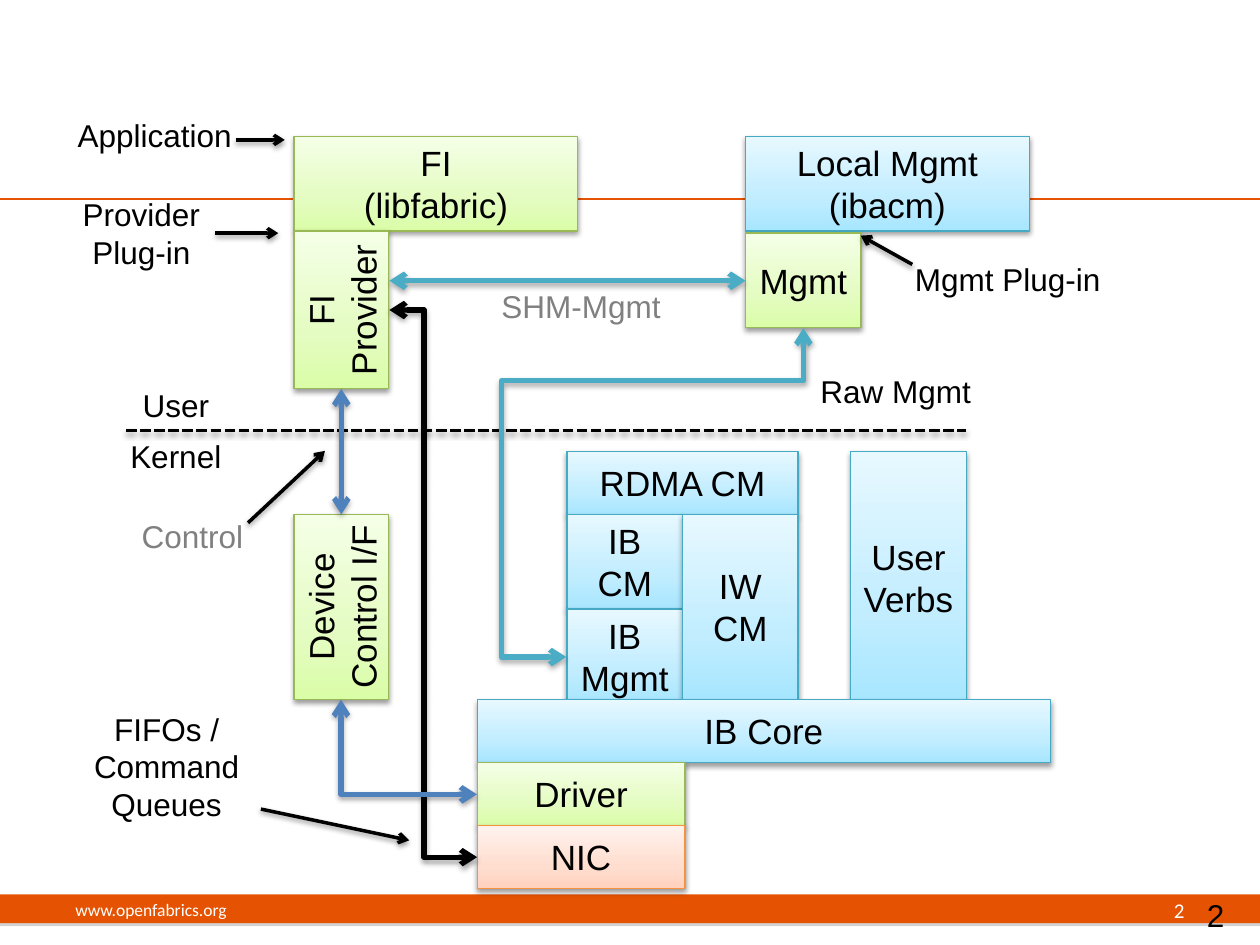
from copy import deepcopy
from dataclasses import dataclass

from lxml.etree import SubElement
from pptx import Presentation
from pptx.dml.color import RGBColor
from pptx.enum.dml import MSO_LINE
from pptx.enum.shapes import MSO_CONNECTOR, MSO_SHAPE
from pptx.enum.text import MSO_ANCHOR, MSO_AUTO_SIZE, PP_ALIGN
from pptx.oxml.ns import qn
from pptx.util import Cm, Pt


@dataclass(frozen=True)
class Theme:
    # Gradient from bottom to top, then the outline
    green: tuple = ("DAFDA7", "E4FCC2", "F5FFE7", "98B955")
    blue: tuple = ("A7E6FF", "C1EDFF", "E7F8FF", "46AAC5")
    orange: tuple = ("FFD2BD", "FFDED0", "FFF2ED", "F69240")
    stops: tuple = (0, 0.35, 1)
    brand: str = "E55302"
    black: str = "000000"
    white: str = "FFFFFF"
    grey: str = "808080"
    teal: str = "4BACC6"
    steel: str = "4F81BD"
    font: str = "Arial"
    footer_font: str = "Calibri"
    box_size: int = 20
    label_size: int = 18
    number_size: int = 12
    footer_size: int = 10


T = Theme()


def rgb(value):
    return RGBColor.from_string(value)


def write(tf, text, size=T.label_size, color=T.black, font=T.font,
          align=PP_ALIGN.CENTER, anchor=MSO_ANCHOR.TOP):
    tf.word_wrap = True
    tf.vertical_anchor = anchor
    tf.text = text
    for p in tf.paragraphs:
        p.alignment = align
        for r in p.runs:
            r.font.size, r.font.name = Pt(size), font
            r.font.color.rgb = rgb(color)


def add_shadow(sp, color=T.black, alpha=38, blur=3.1, dist=1.6):
    effects = SubElement(sp._element.spPr, qn("a:effectLst"))
    if not alpha:
        return
    shadow = SubElement(effects, qn("a:outerShdw"), blurRad=str(Pt(blur)),
                        dist=str(Pt(dist)), dir="5400000", rotWithShape="0")
    clr = SubElement(shadow, qn("a:srgbClr"), val=color)
    SubElement(clr, qn("a:alpha"), val=str(alpha * 1000))


class Diagram:
    def __init__(self, slide, theme):
        self.s, self.t = slide, theme

    def band(self, x, y, w, h):
        sp = self.s.shapes.add_shape(MSO_SHAPE.RECTANGLE, Cm(x), Cm(y), Cm(w), Cm(h))
        sp.fill.solid()
        sp.fill.fore_color.rgb = rgb(self.t.brand)
        sp.line.fill.background()
        add_shadow(sp, self.t.grey, 35, 0, 1.8)

    def box(self, text, x, y, w, h, style, vertical=False):
        sp = self.s.shapes.add_shape(MSO_SHAPE.RECTANGLE, Cm(x), Cm(y), Cm(w), Cm(h))
        sp.fill.gradient()
        sp.fill.gradient_angle = 90
        stops = sp._element.spPr.find(".//" + qn("a:gsLst"))
        stops.append(deepcopy(stops[0]))
        for stop, pos, color in zip(sp.fill.gradient_stops, self.t.stops, style):
            stop.position, stop.color.rgb = pos, rgb(color)
        sp.line.color.rgb, sp.line.width = rgb(style[-1]), Pt(0.75)
        add_shadow(sp)
        tf = sp.text_frame
        write(tf, text, size=self.t.box_size, anchor=MSO_ANCHOR.MIDDLE)
        if vertical:
            tf._txBody.bodyPr.set("vert", "vert270")
            # Narrow margins keep the turned text on two lines
            tf.margin_left = tf.margin_right = Cm(0.05)
            tf.margin_top = tf.margin_bottom = Cm(0.05)

    def label(self, text, x, y, w, h=1.02, grow=True, **fmt):
        sp = self.s.shapes.add_textbox(Cm(x), Cm(y), Cm(w), Cm(h))
        write(sp.text_frame, text, **fmt)
        if grow:
            sp.text_frame.auto_size = MSO_AUTO_SIZE.SHAPE_TO_FIT_TEXT

    def line(self, x1, y1, x2, y2, color=T.black, width=2, ends=(), dash=None,
             shadow=38, kind=MSO_CONNECTOR.STRAIGHT):
        cx = self.s.shapes.add_connector(kind, Cm(x1), Cm(y1), Cm(x2), Cm(y2))
        cx.line.color.rgb, cx.line.width = rgb(color), Pt(width)
        if dash:
            cx.line.dash_style = dash
        for end in ends:
            SubElement(cx.line._get_or_add_ln(), qn(f"a:{end}"), type="arrow")
        add_shadow(cx, alpha=shadow)
        return cx

    def arrow(self, *ends):
        self.line(*ends, ends=("tailEnd",))

    def link(self, x1, y1, x2, y2, color, **fmt):
        return self.line(x1, y1, x2, y2, color, 3, ("headEnd", "tailEnd"),
                         shadow=35, **fmt)

    def elbow(self, x1, y1, x2, y2, color, preset, rotation=0, adjust=()):
        """Ends are those of the connector before it is rotated."""
        cx = self.link(x1, y1, x2, y2, color, kind=MSO_CONNECTOR.ELBOW)
        sp_pr = cx._element.spPr
        sp_pr.find(qn("a:xfrm")).set("rot", str(rotation * 60000))
        geom = sp_pr.find(qn("a:prstGeom"))
        geom.set("prst", preset)
        guides = geom.find(qn("a:avLst"))
        for i, value in enumerate(adjust, 1):
            SubElement(guides, qn("a:gd"), name=f"adj{i}", fmla=f"val {value}")


def main():
    prs = Presentation()
    prs.slide_width, prs.slide_height = Cm(25.4), Cm(19.05)
    d = Diagram(prs.slides.add_slide(prs.slide_layouts[6]), T)

    # Header rule and footer
    d.band(0, 18.03, 25.4, 0.58)
    d.line(0, 4.02, 25.4, 4.02, T.brand, 1, shadow=0)
    footer = dict(grow=False, color=T.white, font=T.footer_font, anchor=MSO_ANCHOR.MIDDLE)
    d.label("www.openfabrics.org", 1.27, 17.83, 8.05, size=T.footer_size,
            align=PP_ALIGN.LEFT, **footer)
    d.label("2", 18.21, 17.83, 5.92, size=T.number_size, align=PP_ALIGN.RIGHT, **footer)
    d.label("2", 24.08, 17.93, 1.27, grow=False, align=PP_ALIGN.LEFT)

    # Columns, widths and heights shared by the stacked boxes
    fi, core, cm, mgmt = 5.93, 9.62, 11.43, 15.03
    wide, half, slim, driver = 5.72, 2.33, 1.91, 4.19
    tall, row = 1.91, 1.27
    top, kernel, core_top = 2.75, 9.1, 14.1
    cm_top = kernel + row
    cm_h = core_top - cm_top

    # Software stack
    for args in (
        ("FI\n(libfabric)", fi, top, wide, tall, T.green),
        ("FI Provider", fi, top + tall, slim, 3.18, T.green, True),
        ("RDMA CM", cm, kernel, 2 * half, row, T.blue),
        ("IB CM", cm, cm_top, half, tall, T.blue),
        ("IB Mgmt", cm, cm_top + tall, half, tall, T.blue),
        ("User Verbs", 17.15, kernel, half, 5.08, T.blue),
        ("IW CM", cm + half, cm_top, half, cm_h, T.blue),
        ("IB Core", core, core_top, 11.56, row, T.blue),
        ("Driver", core, core_top + row, driver, row, T.green),
        ("NIC", core, core_top + 2 * row, driver, row, T.orange),
        ("Device Control I/F", fi, cm_top, slim, cm_h, T.green, True),
        ("Local Mgmt\n(ibacm)", mgmt, top, wide, tall, T.blue),
        ("Mgmt", mgmt, 4.7, half, tall, T.green),
    ):
        d.box(*args)

    # Border between user and kernel space
    d.line(2.54, 8.68, 19.48, 8.68, dash=MSO_LINE.SQUARE_DOT)

    # Two-way links between the boxes
    d.link(7.85, 5.66, 15.03, 5.66, T.teal)
    d.elbow(7.85, 6.25, 9.62, 17.28, T.black, "bentConnector3", adjust=(39500,))
    d.link(6.88, 7.84, 6.88, 10.37, T.steel)
    d.elbow(9.2, 13.69, 7.29, 16.43, T.steel, "bentConnector2", 270)
    d.elbow(10.49, 7.54, 17.12, 12.32, T.teal, "bentConnector4", 90, (16000, 127300))

    # Labels
    for text, *place in (
        ("User", 1.35, 7.65, 4.39),
        ("Kernel", 1.35, 8.69, 4.39),
        ("Application", 1.24, 2.21, 3.76),
        ("Mgmt Plug-in", 18.08, 5.11, 4.47),
        ("FIFOs / Command Queues", 1.47, 14.18, 3.78, 2.57),
        ("Provider Plug-in", 1.35, 3.81, 3, 1.8),
        ("Raw Mgmt", 16.2, 7.37, 3.71),
    ):
        d.label(text, *place)
    d.label("Control", 2.51, 10.29, 2.74, color=T.grey)
    d.label("SHM-Mgmt", 9.48, 5.66, 4.47, color=T.grey)

    # Pointers from labels
    for ends in (
        (4.75, 2.82, 5.74, 2.82),
        (18.39, 5.33, 17.35, 4.75),
        (5, 10.54, 6.55, 9.09),
        (5.26, 16.31, 8.25, 16.94),
        (4.34, 4.7, 5.61, 4.7),
    ):
        d.arrow(*ends)

    prs.save("out.pptx")


if __name__ == "__main__":
    main()
